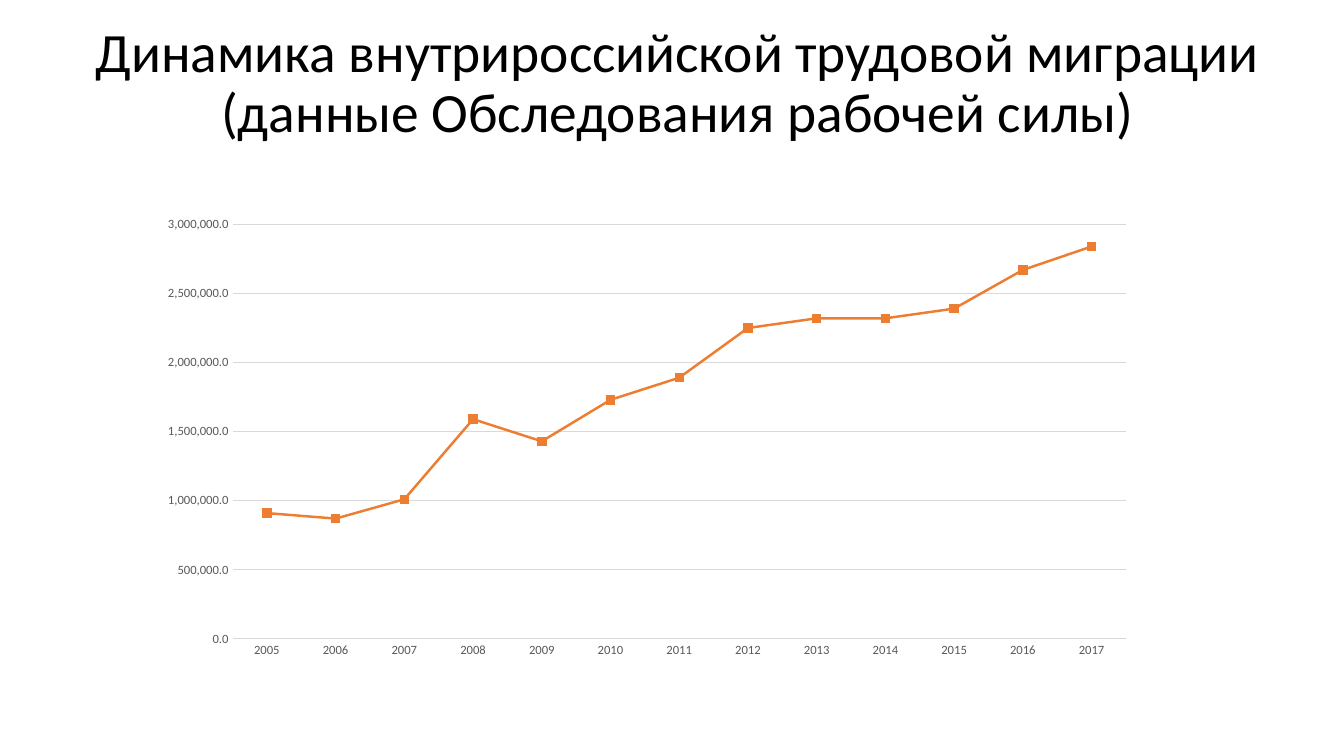
from lxml import etree
from pptx import Presentation
from pptx.chart.data import CategoryChartData
from pptx.dml.color import RGBColor
from pptx.enum.chart import XL_CHART_TYPE, XL_MARKER_STYLE, XL_TICK_MARK
from pptx.enum.text import MSO_ANCHOR, MSO_AUTO_SIZE, PP_ALIGN
from pptx.oxml.ns import qn
from pptx.util import Inches, Pt

LINE_MARKERS = XL_CHART_TYPE.LINE_MARKERS
SQUARE = XL_MARKER_STYLE.SQUARE
NO_TICK = XL_TICK_MARK.NONE
MIDDLE = MSO_ANCHOR.MIDDLE
NO_AUTOFIT = MSO_AUTO_SIZE.NONE
CENTER = PP_ALIGN.CENTER

FONT = "Calibri"
BLACK, GRAY, GRID, ORANGE = "000000", "595959", "D9D9D9", "ED7D31"
TITLE = "Динамика внутрироссийской трудовой миграции (данные Обследования рабочей силы)"
YEARS = [str(year) for year in range(2005, 2018)]
MIGRANTS = [
    910000, 870000, 1010000, 1590000, 1430000, 1730000, 1890000,
    2250000, 2320000, 2320000, 2390000, 2670000, 2840000,
]
PLOT_AREA = {"x": 0.09, "y": 0.114, "w": 0.88, "h": 0.737}


def color(value):
    """Return the colour for a hex string."""
    return RGBColor.from_string(value)


def style_font(font, size, value):
    """Set the typeface, size and colour of a font."""
    font.name = FONT
    font.size = Pt(size)
    font.bold = False
    font.color.rgb = color(value)


def style_line(line, width, value):
    """Set the width and colour of a line."""
    line.width = Pt(width)
    line.color.rgb = color(value)


def add_title(slide, text):
    """Place the slide title and fill it with centred text."""
    title = slide.shapes.title
    title.left, title.top = Inches(0.33), Inches(0.19)
    title.width, title.height = Inches(12.78), Inches(1.29)
    frame = title.text_frame
    frame.word_wrap = True
    frame.auto_size = NO_AUTOFIT
    frame.vertical_anchor = MIDDLE
    paragraph = frame.paragraphs[0]
    paragraph.alignment = CENTER
    paragraph.line_spacing = 0.9
    run = paragraph.add_run()
    run.text = text
    style_font(run.font, 39.6, BLACK)


def set_plot_layout(chart, fractions):
    """Fix the inner plot area as fractions of the chart."""
    plot_area = chart._chartSpace.find(".//" + qn("c:plotArea"))
    for old_layout in plot_area.findall(qn("c:layout")):
        plot_area.remove(old_layout)
    layout = etree.Element(qn("c:layout"))
    manual = etree.SubElement(layout, qn("c:manualLayout"))
    settings = [("layoutTarget", "inner"), ("xMode", "edge"), ("yMode", "edge")]
    for tag, value in settings + list(fractions.items()):
        etree.SubElement(manual, qn("c:" + tag)).set("val", str(value))
    plot_area.insert(0, layout)


def style_axis(axis):
    """Remove tick marks and set the label font of an axis."""
    axis.major_tick_mark = NO_TICK
    axis.minor_tick_mark = NO_TICK
    style_font(axis.tick_labels.font, 9, GRAY)


def style_series(series, value):
    """Draw a series as a straight line with square markers."""
    series.smooth = False
    style_line(series.format.line, 1.75, value)
    marker = series.marker
    marker.style = SQUARE
    marker.size = 6
    marker.format.fill.solid()
    marker.format.fill.fore_color.rgb = color(value)
    style_line(marker.format.line, 0.75, value)


def add_migration_chart(slide):
    """Add the line chart of labour migrants by year."""
    data = CategoryChartData(number_format="#,##0.0")
    data.categories = YEARS
    data.add_series("Series 1", MIGRANTS)
    frame = slide.shapes.add_chart(
        LINE_MARKERS, Inches(1.4), Inches(1.59), Inches(10.07), Inches(5.58), data
    )
    chart = frame.chart
    chart.has_legend = False
    chart.has_title = False
    style_font(chart.font, 10, BLACK)
    set_plot_layout(chart, PLOT_AREA)

    year_axis, value_axis = chart.category_axis, chart.value_axis
    style_axis(year_axis)
    style_line(year_axis.format.line, 0.75, GRID)
    style_axis(value_axis)
    value_axis.format.line.fill.background()
    value_axis.minimum_scale = 0
    value_axis.maximum_scale = 3000000
    value_axis.major_unit = 500000
    value_axis.tick_labels.number_format = "#,##0.0"
    value_axis.tick_labels.number_format_is_linked = False
    value_axis.has_major_gridlines = True
    style_line(value_axis.major_gridlines.format.line, 0.75, GRID)

    plot = chart.plots[0]
    plot.vary_by_categories = False
    style_series(plot.series[0], ORANGE)


def main():
    """Build the slide and save the presentation."""
    presentation = Presentation()
    presentation.slide_width = Inches(13.33)
    presentation.slide_height = Inches(7.5)
    slide = presentation.slides.add_slide(presentation.slide_layouts[5])
    add_title(slide, TITLE)
    add_migration_chart(slide)
    presentation.save("out.pptx")


if __name__ == "__main__":
    main()
